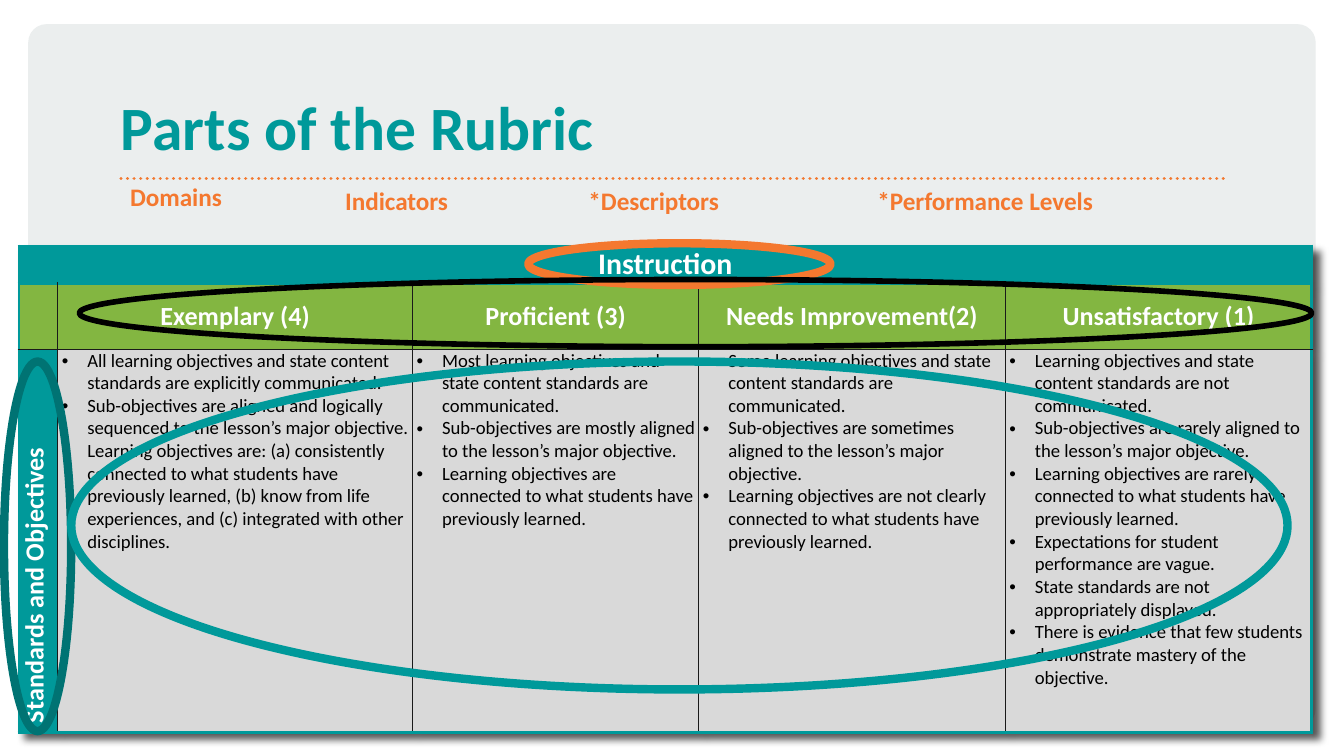
from lxml import etree
from pptx import Presentation
from pptx.dml.color import RGBColor
from pptx.enum import dml, shapes, text
from pptx.oxml import parse_xml
from pptx.oxml.ns import nsdecls, qn
from pptx.util import Inches, Pt

TEAL = RGBColor(0x00, 0x99, 0x9A)
DARK_TEAL = RGBColor(0x00, 0x73, 0x73)
ORANGE = RGBColor(0xF4, 0x78, 0x2F)
RULE_ORANGE = RGBColor(0xF3, 0x78, 0x2F)
GREEN = RGBColor(0x83, 0xB6, 0x41)
PANEL_GRAY = RGBColor(0xEB, 0xEE, 0xEE)
CELL_GRAY = RGBColor(0xD9, 0xD9, 0xD9)
GRID = RGBColor(0x1A, 0x1A, 0x1A)
BLACK = RGBColor(0, 0, 0)
WHITE = RGBColor(0xFF, 0xFF, 0xFF)
FONT = "Calibri"

# Content
TITLE = "Parts of the Rubric"
PART_LABELS = [  # wording, wraps, left, top, width, height
    ("Domains", True, 0.87, 1.3, 1.58, 0.34),
    ("Indicators", False, 2.47, 1.33, 0.98, 0.56),
    ("*Descriptors", False, 4.28, 1.33, 1.18, 0.33),
    ("*Performance Levels", False, 6.43, 1.33, 1.82, 0.56),
]
DOMAIN = "Instruction"
INDICATOR = "Standards and Objectives"
LEVELS = [
    ("Exemplary (4)", [
        "All learning objectives and state content standards are explicitly communicated.",
        "Sub-objectives are aligned and logically sequenced to the lesson’s major objective.",
        "Learning objectives are: (a) consistently connected to what students have previously "
        "learned, (b) know from life experiences, and (c) integrated with other disciplines.",
    ]),
    ("Proficient (3)", [
        "Most learning objectives and state content standards are communicated.",
        "Sub-objectives are mostly aligned to the lesson’s major objective.",
        "Learning objectives are connected to what students have previously learned.",
    ]),
    ("Needs Improvement(2)", [
        "Some learning objectives and state content standards are communicated.",
        "Sub-objectives are sometimes aligned to the lesson’s major objective.",
        "Learning objectives are not clearly connected to what students have previously learned.",
    ]),
    ("Unsatisfactory (1)", [
        "Learning objectives and state content standards are not communicated.",
        "Sub-objectives are rarely aligned to the lesson’s major objective.",
        "Learning objectives are rarely connected to what students have previously learned.",
        "Expectations for student performance are vague.",
        "State standards are not appropriately displayed.",
        "There is evidence that few students demonstrate mastery of the objective.",
    ]),
]
COLUMN_WIDTHS = [0.29, 2.64, 2.13, 2.28, 2.28]
ROW_HEIGHTS = [0.28, 0.49, 2.85]
HIGHLIGHTS = [  # left, top, width, height, colour, line width
    (3.93, 1.81, 2.25, 0.31, ORANGE, 4.5),
    (0.03, 2.69, 0.5, 2.75, DARK_TEAL, 4.5),
    (0.53, 2.69, 9.05, 2.44, TEAL, 4.5),
    (0.59, 2.08, 9.17, 0.5, BLACK, 3),
]


def set_font(paragraph, size, color, bold=True):
    font = paragraph.font
    font.name, font.size, font.bold = FONT, Pt(size), bold
    font.color.rgb = color


def fill_cell(cell, fill, lines=(), size=14, color=WHITE, bold=True, side=0.07,
              align=None, anchor=text.MSO_ANCHOR.MIDDLE, bullets=False):
    cell.fill.solid()
    cell.fill.fore_color.rgb = fill
    cell.margin_left = cell.margin_right = Inches(side)
    cell.margin_top = cell.margin_bottom = 0
    cell.vertical_anchor = anchor
    frame = cell.text_frame
    for i, line in enumerate(lines):
        paragraph = frame.paragraphs[0] if i == 0 else frame.add_paragraph()
        paragraph.text = line
        paragraph.alignment = align
        if bullets:
            props = paragraph._p.get_or_add_pPr()
            props.set("marL", str(Inches(0.19)))
            props.set("indent", str(-Inches(0.19)))
            etree.SubElement(props, qn("a:buFont")).set("typeface", "Arial")
            etree.SubElement(props, qn("a:buChar")).set("char", "•")
        set_font(paragraph, size, color, bold)


def set_borders(cell, outer):
    """Teal 1.5 pt on the outer sides, thin dark lines elsewhere."""
    props = cell._tc.get_or_add_tcPr()
    for i, side in enumerate("LRTB"):
        color, width = (TEAL, 1.5) if side in outer else (GRID, 0.5)
        props.insert(i, parse_xml(
            f'<a:ln{side} {nsdecls("a")} w="{Pt(width)}"><a:solidFill>'
            f'<a:srgbClr val="{color}"/></a:solidFill></a:ln{side}>'))


prs = Presentation()
prs.slide_width = Inches(10)
prs.slide_height = prs.slide_width * 9 // 16
slide = prs.slides.add_slide(prs.slide_layouts[5])

# Background panel and dotted rule
panel = slide.shapes.add_shape(shapes.MSO_SHAPE.ROUNDED_RECTANGLE, Inches(0.21), Inches(0.18),
                               Inches(9.58), Inches(5.23))
panel.adjustments[0] = 0.026
panel.shadow.inherit = False
panel.fill.solid()
panel.fill.fore_color.rgb = PANEL_GRAY
panel.line.fill.background()

rule = slide.shapes.add_connector(shapes.MSO_CONNECTOR.STRAIGHT, Inches(0.9), Inches(1.33),
                                  Inches(9.11), Inches(1.33))
rule.line.color.rgb = RULE_ORANGE
rule.line.width = Pt(1.75)
rule.line.dash_style = dml.MSO_LINE.ROUND_DOT
rule._element.spPr.find(qn("a:ln")).set("cap", "rnd")
etree.SubElement(rule._element.spPr, qn("a:effectLst"))

# Title, moved in front of the panel
title = slide.shapes.title
slide.shapes._spTree.append(title._element)
title.left, title.top, title.width, title.height = map(Inches, (0.9, 0.16, 8.2, 1.05))
title.text = TITLE
frame = title.text_frame
frame.auto_size = text.MSO_AUTO_SIZE.NONE
frame.vertical_anchor = text.MSO_ANCHOR.BOTTOM
frame.margin_left = frame.margin_right = frame.margin_top = frame.margin_bottom = 0
heading = frame.paragraphs[0]
heading.alignment = text.PP_ALIGN.LEFT
heading.line_spacing = 0.85
set_font(heading, 33, TEAL)

# Rubric table
rubric = slide.shapes.add_table(3, 5, Inches(0.14), Inches(1.83), Inches(sum(COLUMN_WIDTHS)),
                                Inches(sum(ROW_HEIGHTS))).table
rubric.first_row = rubric.horz_banding = False
rubric._tbl.tblPr.insert(0, parse_xml(
    f'<a:effectLst {nsdecls("a")}><a:outerShdw blurRad="{Pt(4)}" dist="{Pt(5)}" dir="2700000" '
    'algn="tl" rotWithShape="0"><a:srgbClr val="000000"><a:alpha val="65000"/></a:srgbClr>'
    '</a:outerShdw></a:effectLst>'))
for column, width in zip(rubric.columns, COLUMN_WIDTHS):
    column.width = Inches(width)
for row, height in zip(rubric.rows, ROW_HEIGHTS):
    row.height = Inches(height)

rubric.cell(0, 0).merge(rubric.cell(0, 4))
fill_cell(rubric.cell(0, 0), TEAL, [DOMAIN], size=16, align=text.PP_ALIGN.CENTER)
fill_cell(rubric.cell(1, 0), GREEN)
fill_cell(rubric.cell(2, 0), TEAL, [INDICATOR])
rubric.cell(2, 0)._tc.get_or_add_tcPr().set("vert", "vert270")
for c, (level, descriptors) in enumerate(LEVELS, start=1):
    fill_cell(rubric.cell(1, c), GREEN, [level], align=text.PP_ALIGN.CENTER)
    fill_cell(rubric.cell(2, c), CELL_GRAY, descriptors, size=10, color=BLACK, bold=False,
              side=0.03, anchor=text.MSO_ANCHOR.TOP, bullets=True)

ROW_OUTER = ["LRTB", "T", "B"]
for r, row_outer in enumerate(ROW_OUTER):
    for c in range(5):
        set_borders(rubric.cell(r, c), row_outer + {0: "L", 4: "R"}.get(c, ""))

# Ellipses around the named parts
for left, top, width, height, color, weight in HIGHLIGHTS:
    ellipse = slide.shapes.add_shape(shapes.MSO_SHAPE.OVAL, Inches(left), Inches(top),
                                     Inches(width), Inches(height))
    ellipse.shadow.inherit = False
    ellipse.fill.background()
    ellipse.line.color.rgb = color
    ellipse.line.width = Pt(weight)

# Labels under the rule
for label, wraps, *box in PART_LABELS:
    part = slide.shapes.add_textbox(*map(Inches, box)).text_frame
    part.word_wrap = wraps
    part.text = label
    set_font(part.paragraphs[0], 13.5, ORANGE)

prs.save("out.pptx")
